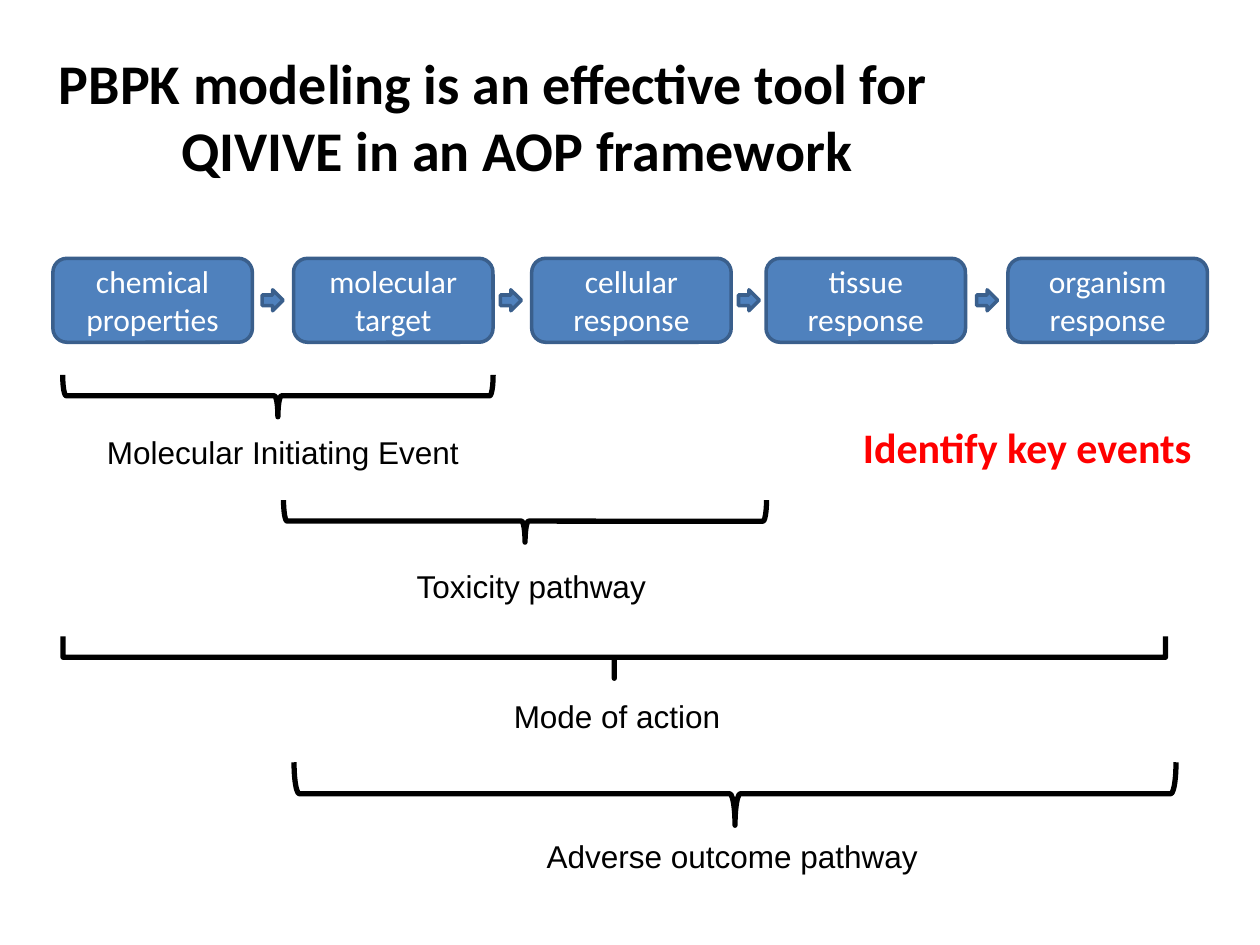
"""Build a slide that places PBPK modeling within an adverse outcome pathway framework."""
from pptx import Presentation
from pptx.dml.color import RGBColor
from pptx.enum.shapes import MSO_SHAPE
from pptx.enum.text import MSO_ANCHOR, MSO_AUTO_SIZE, PP_ALIGN
from pptx.util import Pt

BOX, ARROW, BRACE = MSO_SHAPE.ROUNDED_RECTANGLE, MSO_SHAPE.RIGHT_ARROW, MSO_SHAPE.RIGHT_BRACE
LEFT, CENTER = PP_ALIGN.LEFT, PP_ALIGN.CENTER
TOP, MIDDLE = MSO_ANCHOR.TOP, MSO_ANCHOR.MIDDLE
FIXED, GROW = MSO_AUTO_SIZE.NONE, MSO_AUTO_SIZE.SHAPE_TO_FIT_TEXT

COLORS = {"blue": "4F81BD", "edge": "3A5F8C", "black": "000000",
          "white": "FFFFFF", "red": "FF0000"}

TITLE = "PBPK modeling is an effective tool for QIVIVE in an AOP framework"
CALLOUT = "Identify key events"
STAGES = [
    ("chemical\nproperties", 30.24),
    ("molecular\ntarget", 167.76),
    ("cellular response", 303.84),
    ("tissue\nresponse", 437.76),
    ("organism\nresponse", 576),
]
SPANS = [
    {"label": "Molecular Initiating Event", "text_box": (54, 244, 217.5),
     "brace": (35.8, 214.2, 246, 24)},
    {"label": "Toxicity pathway", "text_box": (231, 320.5, 147),
     "brace": (162, 285.8, 276, 24)},
    {"label": "Mode of action", "text_box": (286.5, 394.5, 134),
     "brace": (36, 363.6, 630, 24), "curve": 0},
    {"label": "Adverse outcome pathway", "text_box": (305.3, 475, 229),
     "brace": (168, 435.6, 504, 36)},
]
STAGE_TOP, STAGE_WIDTH, STAGE_HEIGHT = 147.6, 114, 48
ARROW_LEFT, ARROW_STEP, ARROW_SIZE = 149.8, 136.1, 12
LABEL_HEIGHT = 29


def color(name):
    return RGBColor.from_string(COLORS[name])


def write(shape, text, size=18, font="Calibri", ink="black", bold=False,
          align=LEFT, anchor=TOP, wrap=True, fit=FIXED):
    frame = shape.text_frame
    frame.text = text
    frame.word_wrap = wrap
    frame.auto_size = fit
    frame.vertical_anchor = anchor
    for paragraph in frame.paragraphs:
        paragraph.alignment = align
        for run in paragraph.runs:
            run.font.size = Pt(size)
            run.font.name = font
            run.font.bold = bold
            run.font.color.rgb = color(ink)


def add_outlined(slide, kind, left, top, width, height, fill, edge, weight):
    shape = slide.shapes.add_shape(kind, Pt(left), Pt(top), Pt(width), Pt(height))
    shape.shadow.inherit = False
    if fill:
        shape.fill.solid()
        shape.fill.fore_color.rgb = color(fill)
    else:
        shape.fill.background()
    shape.line.color.rgb = color(edge)
    shape.line.width = Pt(weight)
    return shape


def add_brace(slide, left, top, span, depth):
    turned_left = left + (span - depth) / 2
    turned_top = top + (depth - span) / 2
    brace = add_outlined(slide, BRACE, turned_left, turned_top, depth, span,
                         None, "black", 3)
    brace.rotation = 90
    return brace


def add_text_box(slide, left, top, width, height):
    return slide.shapes.add_textbox(Pt(left), Pt(top), Pt(width), Pt(height))


def main():
    deck = Presentation()
    deck.slide_width, deck.slide_height = Pt(720), Pt(540)
    slide = deck.slides.add_slide(deck.slide_layouts[5])

    title = slide.shapes.title
    title.left, title.top, title.width, title.height = Pt(12), Pt(24), Pt(540), Pt(67)
    write(title, TITLE, size=32, bold=True, align=CENTER)
    heading = title.text_frame.paragraphs[0]
    heading.space_before = Pt(6)
    indent = Pt(27)
    properties = heading._p.get_or_add_pPr()
    properties.set("marL", str(indent))
    properties.set("indent", str(-indent))

    for text, left in STAGES:
        stage = add_outlined(slide, BOX, left, STAGE_TOP, STAGE_WIDTH, STAGE_HEIGHT,
                             "blue", "edge", 2)
        write(stage, text, ink="white", align=CENTER, anchor=MIDDLE)

    arrow_top = STAGE_TOP + (STAGE_HEIGHT - ARROW_SIZE) / 2
    for step in range(len(STAGES) - 1):
        add_outlined(slide, ARROW, ARROW_LEFT + step * ARROW_STEP, arrow_top,
                     ARROW_SIZE, ARROW_SIZE, "blue", "edge", 2)

    for span in SPANS:
        brace = add_brace(slide, *span["brace"])
        if "curve" in span:
            brace.adjustments[0] = span["curve"]
        label = add_text_box(slide, *span["text_box"], LABEL_HEIGHT)
        write(label, span["label"], font="Arial", wrap=False, fit=GROW)

    callout = add_text_box(slide, 486, 237.6, 219, 36.5)
    write(callout, CALLOUT, size=24, ink="red", bold=True, fit=GROW)

    deck.save("out.pptx")


if __name__ == "__main__":
    main()
